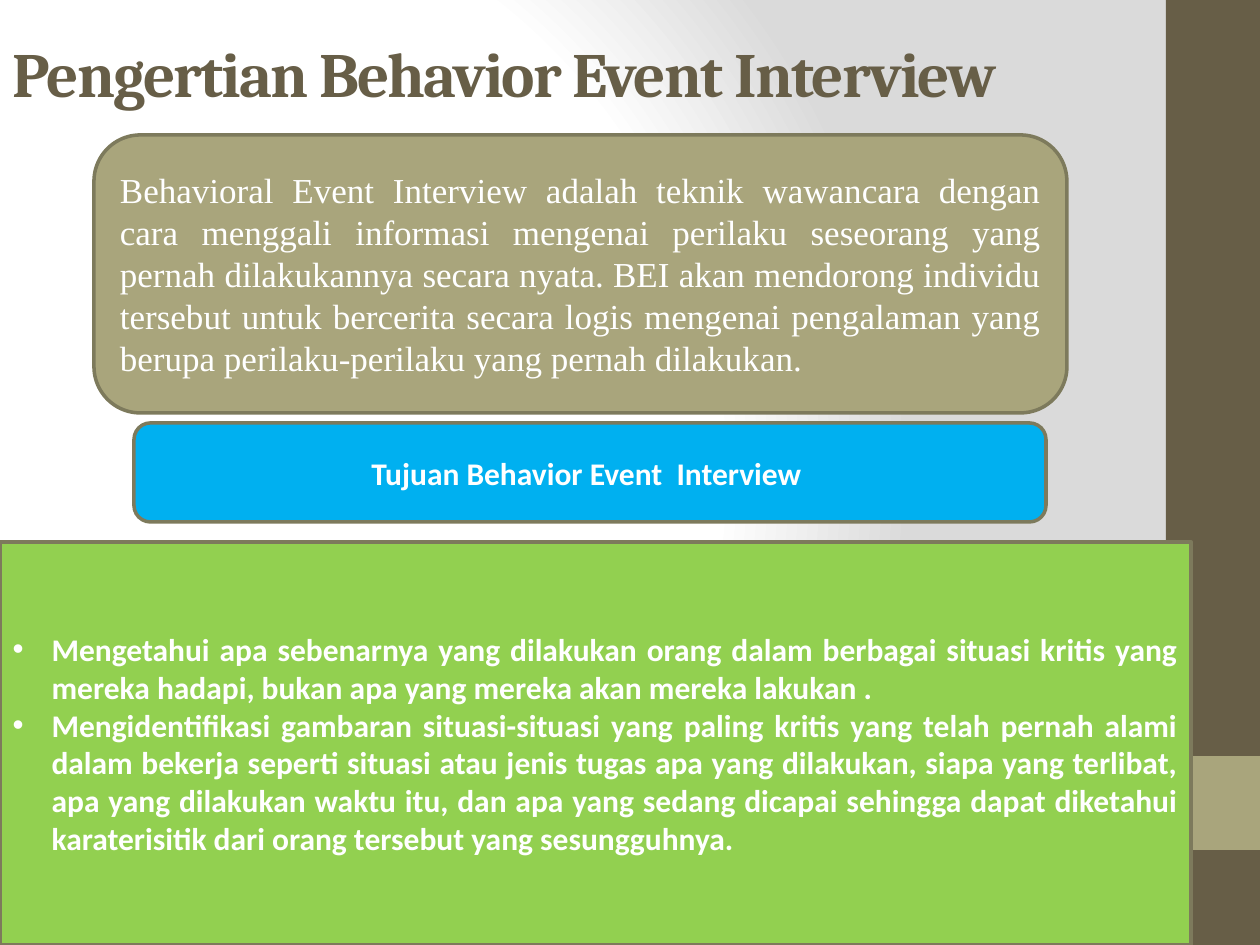
from dataclasses import dataclass

from lxml import etree
from pptx import Presentation
from pptx.dml.color import RGBColor
from pptx.enum.shapes import MSO_SHAPE
from pptx.enum.text import MSO_ANCHOR, MSO_AUTO_SIZE, PP_ALIGN
from pptx.oxml.ns import qn
from pptx.util import Pt

RECT, ROUNDED = MSO_SHAPE.RECTANGLE, MSO_SHAPE.ROUNDED_RECTANGLE
LEFT, CENTER, JUSTIFY = PP_ALIGN.LEFT, PP_ALIGN.CENTER, PP_ALIGN.JUSTIFY
MIDDLE = MSO_ANCHOR.MIDDLE
NO_FIT = MSO_AUTO_SIZE.NONE

PX = 914400 / 126  # EMU per px
WIDTH, HEIGHT = 1260, 945


@dataclass(frozen=True)
class Theme:
    brown: str = "675E47"
    khaki: str = "A9A57C"
    edge: str = "7D7A5C"
    blue: str = "00B0F0"
    green: str = "92D050"
    white: str = "FFFFFF"
    grey: str = "DADADA"
    title_size: int = 36
    definition_size: int = 20
    text_size: int = 18
    edge_width: int = 2


THEME = Theme()


@dataclass(frozen=True)
class Box:
    x: int
    y: int
    w: int
    h: int


@dataclass(frozen=True)
class Style:
    font: str
    size: int
    color: str
    bold: bool
    align: int


@dataclass(frozen=True)
class Panel:
    box: Box
    fill: str
    text: str
    style: Style


TITLE_STYLE = Style("Cambria", THEME.title_size, THEME.brown, True, LEFT)
DEFINITION_STYLE = Style("Times New Roman", THEME.definition_size, THEME.white, False, JUSTIFY)
HEADING_STYLE = Style("Calibri", THEME.text_size, THEME.white, True, CENTER)
LIST_STYLE = Style("Calibri", THEME.text_size, THEME.white, True, JUSTIFY)

TITLE = "Pengertian Behavior Event Interview"
TITLE_BOX = Box(0, 0, 1155, 145)
LIST_BOX = Box(0, 542, 1191, 403)
LIST_INDENT = 39

SIDE_BANDS = [
    (Box(1166, 0, 94, HEIGHT), THEME.brown),
    (Box(1166, 756, 94, 94), THEME.khaki),
]

PANELS = [
    Panel(
        Box(94, 135, 973, 278), THEME.khaki,
        "Behavioral Event Interview adalah teknik wawancara dengan cara menggali "
        "informasi mengenai perilaku seseorang yang pernah dilakukannya secara nyata. "
        "BEI akan mendorong individu tersebut untuk bercerita secara logis mengenai "
        "pengalaman yang berupa perilaku-perilaku yang pernah dilakukan.",
        DEFINITION_STYLE,
    ),
    Panel(Box(134, 423, 912, 99), THEME.blue,
          "Tujuan Behavior Event  Interview ", HEADING_STYLE),
]

GOALS = [
    "Mengetahui apa sebenarnya yang dilakukan orang dalam berbagai situasi kritis "
    "yang mereka hadapi, bukan apa yang mereka akan mereka lakukan .",
    "Mengidentifikasi gambaran situasi-situasi yang paling kritis yang telah pernah "
    "alami dalam bekerja seperti situasi atau jenis tugas apa yang dilakukan, siapa "
    "yang terlibat, apa yang dilakukan waktu itu, dan apa yang sedang dicapai "
    "sehingga dapat diketahui karaterisitik dari orang tersebut yang sesungguhnya.",
]


def emu(px: int) -> int:
    return round(px * PX)


def set_attrs(obj, values: dict) -> None:
    for name, value in values.items():
        setattr(obj, name, value)


def place(sp, box: Box) -> None:
    set_attrs(sp, {"left": emu(box.x), "top": emu(box.y),
                   "width": emu(box.w), "height": emu(box.h)})


def paint(sp, fill: str, edge: bool = True) -> None:
    sp.fill.solid()
    sp.fill.fore_color.rgb = RGBColor.from_string(fill)
    if edge:
        sp.line.color.rgb = RGBColor.from_string(THEME.edge)
        sp.line.width = Pt(THEME.edge_width)
    else:
        sp.line.fill.background()


def write(sp, texts: list[str], style: Style) -> None:
    tf = sp.text_frame
    set_attrs(tf, {"word_wrap": True, "auto_size": NO_FIT, "vertical_anchor": MIDDLE})
    for i, text in enumerate(texts):
        p = tf.add_paragraph() if i else tf.paragraphs[0]
        set_attrs(p, {"alignment": style.align, "space_before": Pt(0)})
        r = p.add_run()
        r.text = text
        set_attrs(r.font, {"name": style.font, "size": Pt(style.size), "bold": style.bold})
        r.font.color.rgb = RGBColor.from_string(style.color)


def add_box(slide, kind: int, box: Box):
    sp = slide.shapes.add_shape(kind, *map(emu, (box.x, box.y, box.w, box.h)))
    sp.shadow.inherit = False
    return sp


def add_bullets(sp, indent: int) -> None:
    for p in sp.text_frame.paragraphs:
        pPr = p._p.get_or_add_pPr()
        pPr.set("marL", str(emu(indent)))
        pPr.set("indent", str(-emu(indent)))
        etree.SubElement(pPr, qn("a:buFont"), typeface="Arial")
        etree.SubElement(pPr, qn("a:buChar"), char="•")


def set_background(slide) -> None:
    fill = slide.background.fill
    fill.gradient()
    grad = slide.background._cSld.find(".//" + qn("a:gradFill"))
    for child in list(grad):
        grad.remove(child)
    stops = etree.SubElement(grad, qn("a:gsLst"))
    for pos, color in ((0, THEME.white), (75, THEME.white), (100, THEME.grey)):
        stop = etree.SubElement(stops, qn("a:gs"), pos=str(pos * 1000))
        etree.SubElement(stop, qn("a:srgbClr"), val=color)
    path = etree.SubElement(grad, qn("a:path"))
    path.set("path", "circle")
    etree.SubElement(path, qn("a:fillToRect"), l="20000", t="50000", r="100000", b="50000")


def main() -> None:
    prs = Presentation()
    set_attrs(prs, {"slide_width": emu(WIDTH), "slide_height": emu(HEIGHT)})
    slide = prs.slides.add_slide(prs.slide_layouts[1])
    title, body = slide.placeholders
    set_background(slide)

    # Side bands
    for box, fill in SIDE_BANDS:
        paint(add_box(slide, RECT, box), fill, edge=False)

    # Title
    place(title, TITLE_BOX)
    write(title, [TITLE], TITLE_STYLE)
    title.text_frame.paragraphs[0].runs[0].font._element.set("spc", "-100")

    # Definition and heading
    for panel in PANELS:
        sp = add_box(slide, ROUNDED, panel.box)
        paint(sp, panel.fill)
        write(sp, [panel.text], panel.style)

    # Goals, in front of the side bands
    place(body, LIST_BOX)
    paint(body, THEME.green)
    write(body, GOALS, LIST_STYLE)
    add_bullets(body, LIST_INDENT)
    slide.shapes._spTree.append(body._element)

    prs.save("out.pptx")


if __name__ == "__main__":
    main()
